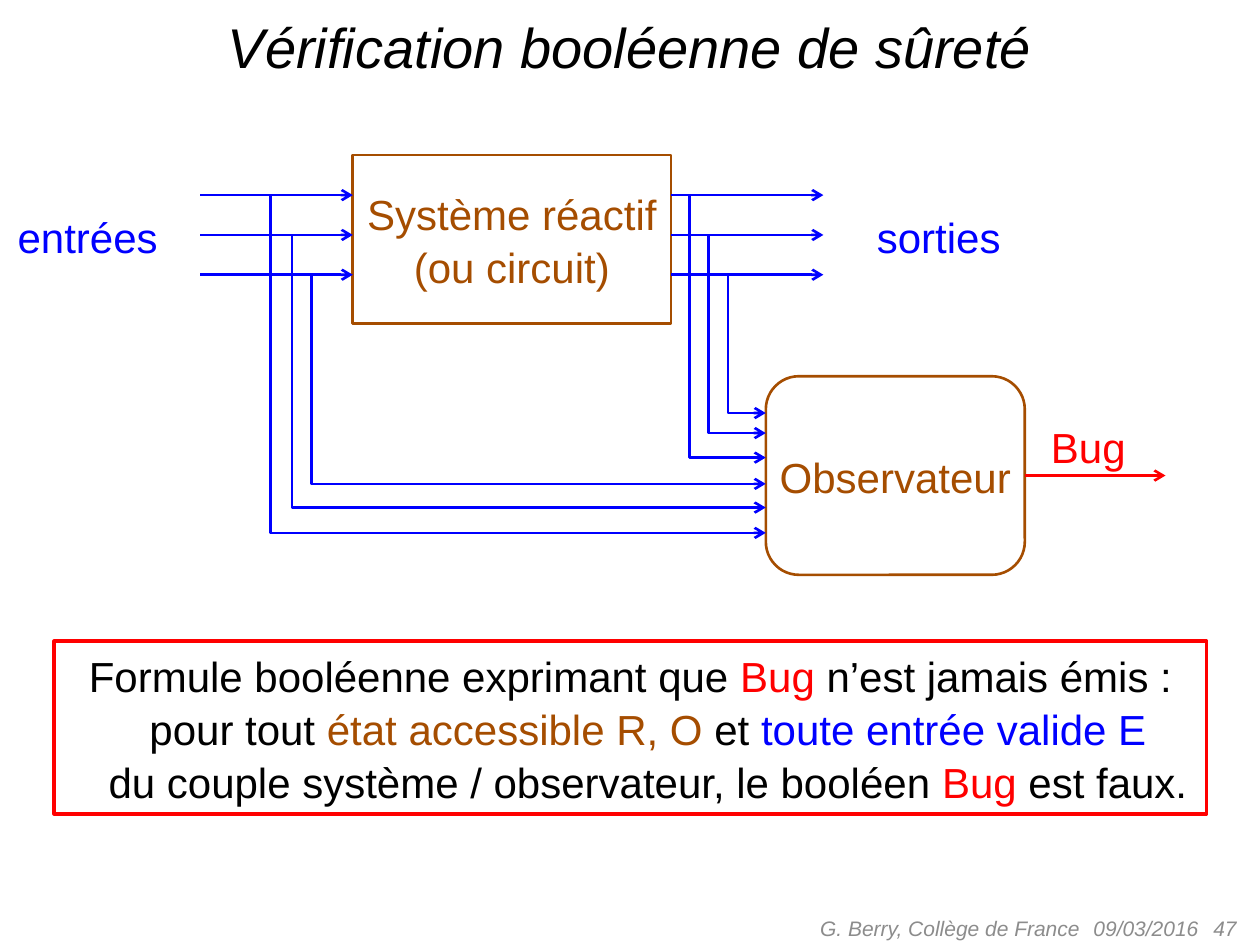
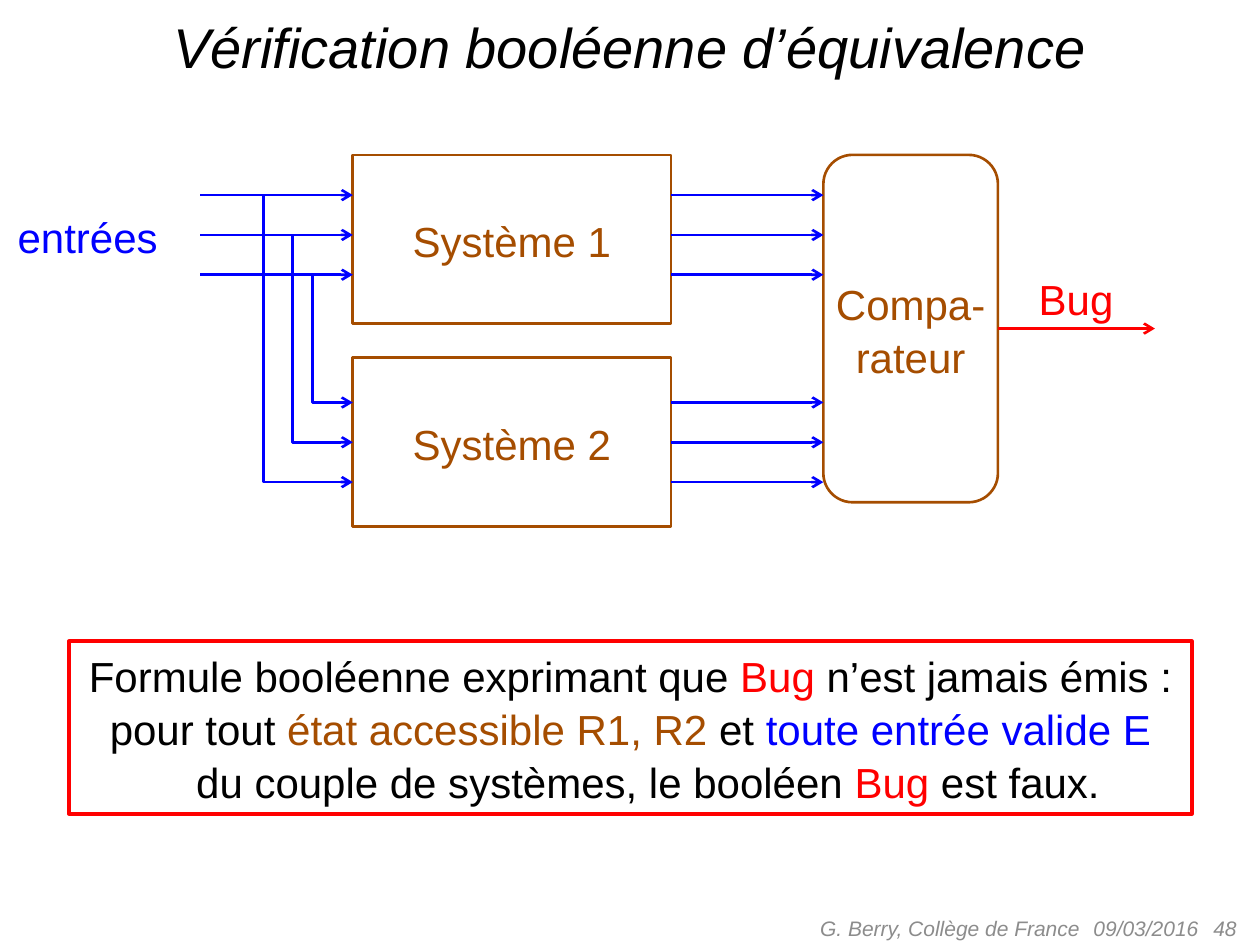
from lxml import etree
from pptx import Presentation
from pptx.dml.color import RGBColor
from pptx.enum.shapes import MSO_CONNECTOR, MSO_SHAPE
from pptx.enum.text import MSO_ANCHOR, MSO_AUTO_SIZE, PP_ALIGN
from pptx.oxml.ns import qn
from pptx.util import Pt

LEFT, CENTER, RIGHT = PP_ALIGN.LEFT, PP_ALIGN.CENTER, PP_ALIGN.RIGHT
TOP, MIDDLE = MSO_ANCHOR.TOP, MSO_ANCHOR.MIDDLE
RECT, ROUNDED = MSO_SHAPE.RECTANGLE, MSO_SHAPE.ROUNDED_RECTANGLE
STRAIGHT, ELBOW = MSO_CONNECTOR.STRAIGHT, MSO_CONNECTOR.ELBOW
NO_AUTOFIT = MSO_AUTO_SIZE.NONE
RIGHT_SIDE = 3

THEME = {
    "font": "Arial",
    "black": RGBColor(0x00, 0x00, 0x00),
    "block": RGBColor(0xA5, 0x4D, 0x00),
    "signal": RGBColor(0x00, 0x00, 0xFF),
    "bug": RGBColor(0xFF, 0x00, 0x00),
    "footer": RGBColor(0x8C, 0x8C, 0x8C),
    "title_size": Pt(32),
    "body_size": Pt(24),
    "footer_size": Pt(12),
    "wire_width": Pt(1.5),
    "frame_width": Pt(2.25),
}
TITLE_FORMAT = {"size": THEME["title_size"], "italic": True}
BODY_FORMAT = {"size": THEME["body_size"]}
FOOTER_FORMAT = {"size": THEME["footer_size"], "italic": True}


def write(frame, lines, font_format, align=CENTER, anchor=MIDDLE, wrap=False, spacing=1.05):
    frame_format = {"word_wrap": wrap, "vertical_anchor": anchor, "auto_size": NO_AUTOFIT}
    for attribute, value in frame_format.items():
        setattr(frame, attribute, value)
    for index, (indent, runs) in enumerate(lines):
        paragraph = frame.add_paragraph() if index else frame.paragraphs[0]
        paragraph.alignment = align
        paragraph.line_spacing = spacing
        if indent:
            paragraph._p.get_or_add_pPr().set("marL", str(Pt(indent)))
        for text, color in runs:
            run = paragraph.add_run()
            run.text = text
            run.font.color.rgb = THEME[color]
            for attribute, value in {"name": THEME["font"], **font_format}.items():
                setattr(run.font, attribute, value)


def draw_wire(slide, start, end, color="signal", kind=STRAIGHT):
    wire = slide.shapes.add_connector(kind, *map(Pt, start + end))
    wire.line.color.rgb = THEME[color]
    wire.line.width = THEME["wire_width"]
    etree.SubElement(wire.line._get_or_add_ln(), qn("a:tailEnd"), type="arrow")
    properties = wire._element.spPr
    etree.SubElement(properties, qn("a:effectLst"))
    if kind == ELBOW:
        guides = properties.find(qn("a:prstGeom")).find(qn("a:avLst"))
        etree.SubElement(guides, qn("a:gd"), name="adj1", fmla="val 0")
    return wire


BLOCK_LEFT, BLOCK_RIGHT = 201.6, 383.4
BLOCK_WIDTH, BLOCK_HEIGHT = BLOCK_RIGHT - BLOCK_LEFT, 96.5
INPUT_START, OUTPUT_END = 114.5, 470.5
ROW_GAP = 22.75
upper_rows = [111.5 + ROW_GAP * row for row in range(3)]
lower_rows = [230 + ROW_GAP * row for row in range(3)]

formula_opening = (0, [("Formule booléenne exprimant que ", "black"), ("Bug", "bug"),
                       (" n’est jamais émis :", "black")])

pages = [
    {
        "title": "Vérification booléenne de sûreté",
        "number": "47",
        "blocks": [
            (RECT, (BLOCK_LEFT, 88.5, BLOCK_WIDTH, BLOCK_HEIGHT), ["Système réactif", "(ou circuit)"]),
            (ROUNDED, (437.6, 215, 148, 113.5), ["Observateur"]),
        ],
        "labels": [("entrées", "signal", (3, 116, 96, 36)), ("sorties", "signal", (494, 116, 86, 36)),
                   ("Bug", "bug", (593.5, 236, 57.5, 36))],
        "taps": [
            (437.6, [154.5, 167, 178], [304.5, 290, 276.5]),
            (437.6, [394, 405, 416], [261.5, 247.5, 236]),
        ],
        "bug_end": 666,
        "formula_box": (31, 366.5, 658.5, 98.5),
        "state": "état accessible R, O",
        "state_indent": 20,
        "couple": "du couple système / observateur, le booléen ",
    },
    {
        "title": "Vérification booléenne d’équivalence",
        "number": "48",
        "blocks": [
            (RECT, (BLOCK_LEFT, 88.5, BLOCK_WIDTH, BLOCK_HEIGHT), ["Système 1"]),
            (RECT, (BLOCK_LEFT, 204.5, BLOCK_WIDTH, BLOCK_HEIGHT), ["Système 2"]),
            (ROUNDED, (470.5, 88.5, 99.75, 198.5), ["Compa-", "rateur"]),
        ],
        "labels": [("entrées", "signal", (3, 116, 96, 36)), ("Bug", "bug", (586.5, 151.5, 57.5, 36))],
        "taps": [(BLOCK_LEFT, [150.5, 167, 178.5], lower_rows[::-1])],
        "bug_end": 660,
        "formula_box": (39.5, 366.5, 641.5, 98.5),
        "state": "état accessible R1, R2",
        "state_indent": 0,
        "couple": "du couple de systèmes, le booléen ",
    },
]

presentation = Presentation()
presentation.slide_width, presentation.slide_height = Pt(720), Pt(540)
title_only = presentation.slide_layouts[5]

for page in pages:
    slide = presentation.slides.add_slide(title_only)
    title = slide.shapes.title
    title.left, title.top, title.width, title.height = map(Pt, (18, 3.5, 684, 46))
    write(title.text_frame, [(0, [(page["title"], "black")])], TITLE_FORMAT,
          anchor=TOP, wrap=True, spacing=1.0)

    for text, left, width, align in [
        ("09/03/2016", 617.75, 168, LEFT),
        (page["number"], 545.75, 168, RIGHT),
        ("G. Berry, Collège de France", 365.75, 258.5, RIGHT),
    ]:
        footer = slide.shapes.add_textbox(Pt(left), Pt(516.25), Pt(width), Pt(28.75))
        write(footer.text_frame, [(0, [(text, "footer")])], FOOTER_FORMAT, align, wrap=True, spacing=1.0)

    formula = [
        formula_opening,
        (page["state_indent"], [("pour tout ", "black"), (page["state"], "block"), (" et ", "black"),
                                ("toute entrée valide E", "signal")]),
        (20, [(page["couple"], "black"), ("Bug", "bug"), (" est faux.", "black")]),
    ]
    frames = [(kind, place, [(0, [(line, "block")]) for line in lines], "block", "wire_width", False)
              for kind, place, lines in page["blocks"]]
    frames.append((RECT, page["formula_box"], formula, "bug", "frame_width", True))
    drawn = []
    for kind, place, lines, color, width, wrap in frames:
        box = slide.shapes.add_shape(kind, *map(Pt, place))
        box.shadow.inherit = False
        box.fill.background()
        box.line.color.rgb = THEME[color]
        box.line.width = THEME[width]
        write(box.text_frame, lines, BODY_FORMAT, wrap=wrap)
        drawn.append(box)
    checker = drawn[-2]

    for text, color, place in page["labels"]:
        label = slide.shapes.add_textbox(*map(Pt, place))
        write(label.text_frame, [(0, [(text, color)])], BODY_FORMAT, LEFT, TOP)

    for row in upper_rows:
        draw_wire(slide, (INPUT_START, row), (BLOCK_LEFT, row))
        draw_wire(slide, (BLOCK_RIGHT, row), (OUTPUT_END, row))

    for target, columns, arrivals in page["taps"]:
        for column, row, arrival in zip(columns, upper_rows, arrivals):
            draw_wire(slide, (column, row), (target, arrival), kind=ELBOW)

    bug_left, bug_top, bug_width, bug_height = page["blocks"][-1][1]
    bug_row = bug_top + bug_height / 2
    bug_wire = draw_wire(slide, (bug_left + bug_width, bug_row), (page["bug_end"], bug_row), "bug")
    bug_wire.begin_connect(checker, RIGHT_SIDE)

    if len(page["blocks"]) == 3:
        second_system = drawn[1]
        lower_wires = [draw_wire(slide, (BLOCK_RIGHT, row), (OUTPUT_END, row)) for row in lower_rows]
        lower_wires[1].begin_connect(second_system, RIGHT_SIDE)

presentation.save("out.pptx")
